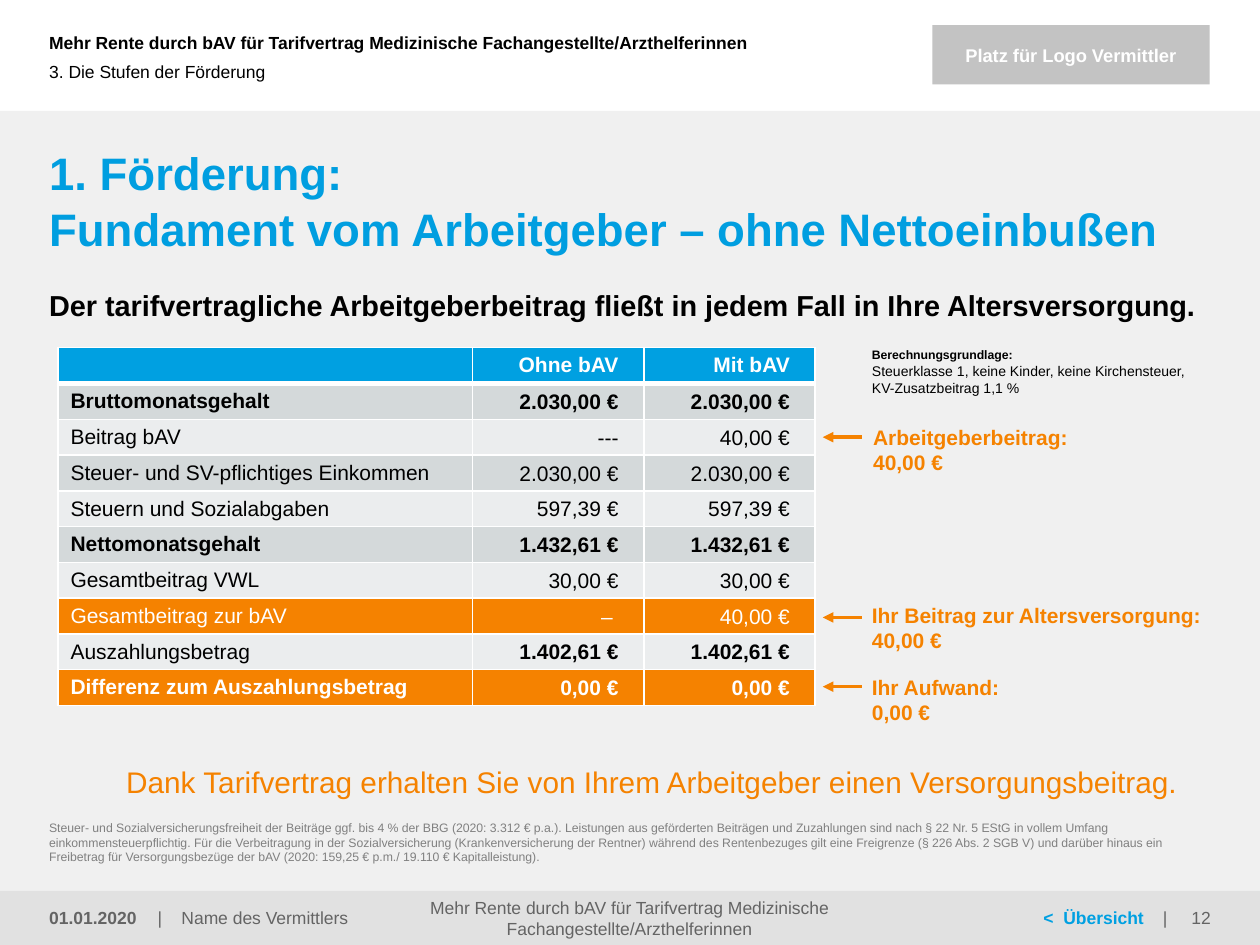
from lxml.etree import SubElement
from pptx import Presentation
from pptx.dml.color import RGBColor
from pptx.enum.shapes import MSO_CONNECTOR, MSO_SHAPE
from pptx.enum.text import MSO_ANCHOR as Anchor, MSO_AUTO_SIZE, PP_ALIGN as Align
from pptx.oxml.ns import qn
from pptx.util import Inches, Pt

BLUE = RGBColor(0x00, 0xA0, 0xE1)
TITLE_BLUE = RGBColor(0x00, 0x9E, 0xE0)
ORANGE = RGBColor(0xF5, 0x82, 0x00)
WHITE = RGBColor(0xFF, 0xFF, 0xFF)
BLACK = RGBColor(0x00, 0x00, 0x00)
PALE_GRAY = RGBColor(0xF0, 0xF0, 0xF0)
FOOTER_GRAY = RGBColor(0xE1, 0xE1, 0xE1)
LOGO_GRAY = RGBColor(0xC3, 0xC3, 0xC3)
TEXT_GRAY = RGBColor(0x64, 0x64, 0x64)
NOTE_GRAY = RGBColor(0x80, 0x80, 0x80)
ROW_DARK = RGBColor(0xD4, 0xD9, 0xDA)
ROW_LIGHT = RGBColor(0xEB, 0xED, 0xEE)


def write_paragraph(paragraph, text, size, color, bold=False, align=Align.LEFT):
    paragraph.text = text
    paragraph.alignment = align
    for run in paragraph.runs:
        run.font.name = "Arial"
        run.font.size = Pt(size)
        run.font.bold = bold
        run.font.color.rgb = color


def set_text(shape, place, text, size, color, bold=False, align=Align.LEFT,
             anchor=Anchor.TOP, insets=(0, 0, 0, 0)):
    """Place a text shape and fill its first paragraph; insets run left, top, right, bottom."""
    shape.left, shape.top, shape.width, shape.height = (Inches(value) for value in place)
    frame = shape.text_frame
    frame.word_wrap = True
    frame.auto_size = MSO_AUTO_SIZE.NONE
    frame.vertical_anchor = anchor
    (frame.margin_left, frame.margin_top,
     frame.margin_right, frame.margin_bottom) = (Inches(value) for value in insets)
    write_paragraph(frame.paragraphs[0], text, size, color, bold, align)
    return frame.paragraphs[0]


presentation = Presentation()
presentation.slide_width = Inches(10)
presentation.slide_height = Inches(7.5)
slide = presentation.slides.add_slide(presentation.slide_layouts[1])
shapes = slide.shapes

# Background bands lie behind the placeholders
for position, (top, height, color) in enumerate(
        [(0.88, 6.62, PALE_GRAY), (7.07, 0.43, FOOTER_GRAY)], start=2):
    band = shapes.add_shape(MSO_SHAPE.RECTANGLE, 0, Inches(top), Inches(10), Inches(height))
    band.shadow.inherit = False
    band.fill.solid()
    band.fill.fore_color.rgb = color
    band.line.fill.background()
    shapes._spTree.insert(position, band._element)

# Title and lead sentence
title = set_text(shapes.title, (0.39, 1.14, 9.22, 0.55),
                 "1. Förderung:\vFundament vom Arbeitgeber – ohne Nettoeinbußen",
                 26, TITLE_BLUE, True)
title.line_spacing = 1.03
lead = set_text(slide.placeholders[1], (0.39, 2.28, 9.22, 0.29),
                "Der tarifvertragliche Arbeitgeberbeitrag fließt in jedem Fall in Ihre Altersversorgung.",
                16.5, BLACK, True)
lead.space_before = Pt(0)
lead_properties = lead._p.get_or_add_pPr()
lead_properties.set("marL", "0")
lead_properties.set("indent", "0")
SubElement(lead_properties, qn("a:buNone"))

# Logo space
logo_space = shapes.add_shape(MSO_SHAPE.RECTANGLE, 0, 0, 0, 0)
logo_space.shadow.inherit = False
logo_space.fill.solid()
logo_space.fill.fore_color.rgb = LOGO_GRAY
logo_space.line.fill.background()
set_text(logo_space, (7.4, 0.2, 2.2, 0.47), "Platz für Logo Vermittler", 10.5, WHITE, True,
         Align.CENTER, Anchor.MIDDLE)

# Header, closing statement, footnote and footer
campaign = "Mehr Rente durch bAV für Tarifvertrag Medizinische Fachangestellte/Arzthelferinnen"
footnote = (
    "Steuer- und Sozialversicherungsfreiheit der Beiträge ggf. bis 4 % der BBG (2020: 3.312 € p.a.). "
    "Leistungen aus geförderten Beiträgen und Zuzahlungen sind nach § 22 Nr. 5 EStG in vollem Umfang "
    "einkommensteuerpflichtig. Für die Verbeitragung in der Sozialversicherung (Krankenversicherung "
    "der Rentner) während des Rentenbezuges gilt eine Freigrenze (§ 226 Abs. 2 SGB V) und darüber "
    "hinaus ein Freibetrag für Versorgungsbezüge der bAV (2020: 159,25 € p.m./ 19.110 € Kapitalleistung).")
text_boxes = [
    ((0, 0, 6.98, 0.67), campaign, 10, BLACK, True, Align.LEFT, Anchor.MIDDLE, (0.39, 0.05, 0.1, 0.05)),
    ((0, 0.25, 7.15, 0.63), "3. Die Stufen der Förderung", 10, BLACK, False, Align.LEFT,
     Anchor.MIDDLE, (0.39, 0, 0, 0)),
    ((1, 5.9, 8.61, 0.68),
     "Dank Tarifvertrag erhalten Sie von Ihrem Arbeitgeber einen Versorgungsbeitrag.",
     17, ORANGE, False, Align.LEFT, Anchor.MIDDLE, (0, 0, 0, 0.08)),
    ((0.39, 6.74, 9.21, 0.12), footnote, 7, NOTE_GRAY, False, Align.LEFT, Anchor.BOTTOM),
    ((0, 7.07, 1.22, 0.43), "01.01.2020", 10, TEXT_GRAY, True, Align.LEFT, Anchor.MIDDLE,
     (0.39, 0.05, 0.1, 0.05)),
    ((2.93, 7.07, 4.13, 0.43), campaign, 10, TEXT_GRAY, False, Align.CENTER, Anchor.MIDDLE),
    ((9.06, 7.07, 0.94, 0.43), "12", 10, TEXT_GRAY, False, Align.RIGHT, Anchor.MIDDLE,
     (0.1, 0.05, 0.39, 0.05)),
]
for settings in text_boxes:
    set_text(shapes.add_textbox(0, 0, 0, 0), *settings)

agent = set_text(shapes.add_textbox(0, 0, 0, 0), (1.25, 7.07, 1.68, 0.43),
                 "|\tName des Vermittlers", 10, TEXT_GRAY, anchor=Anchor.MIDDLE)
overview = set_text(shapes.add_textbox(0, 0, 0, 0), (8.28, 7.07, 1.02, 0.43),
                    "<\tÜbersicht", 10, BLUE, True, anchor=Anchor.MIDDLE)
separator = overview.add_run()
separator.text = "\t|"
separator.font.name = "Arial"
separator.font.size = Pt(10)
separator.font.color.rgb = TEXT_GRAY
for paragraph, stops in [(agent, [0.19]), (overview, [0.16, 0.95])]:
    tab_list = SubElement(paragraph._p.get_or_add_pPr(), qn("a:tabLst"))
    for stop in stops:
        SubElement(tab_list, qn("a:tab"), pos=str(Inches(stop)), algn="l")

# Salary table: label, two amounts, fill, text colour, bold label, bold amounts
rows = [
    ("", "Ohne bAV", "Mit bAV", BLUE, WHITE, True, True),
    ("Bruttomonatsgehalt", "2.030,00 €", "2.030,00 €", ROW_DARK, BLACK, True, True),
    ("Beitrag bAV", "---", "40,00 €", ROW_LIGHT, BLACK, False, False),
    ("Steuer- und SV-pflichtiges Einkommen", "2.030,00 €", "2.030,00 €", ROW_DARK, BLACK, False, False),
    ("Steuern und Sozialabgaben", "597,39 €", "597,39 €", ROW_LIGHT, BLACK, False, False),
    ("Nettomonatsgehalt", "1.432,61 €", "1.432,61 €", ROW_DARK, BLACK, True, True),
    ("Gesamtbeitrag VWL", "30,00 €", "30,00 €", ROW_LIGHT, BLACK, False, False),
    ("Gesamtbeitrag zur bAV", "– ", "40,00 €", ORANGE, WHITE, False, False),
    ("Auszahlungsbetrag", "1.402,61 €", "1.402,61 €", ROW_LIGHT, BLACK, False, True),
    ("Differenz zum Auszahlungsbetrag", "0,00 €", "0,00 €", ORANGE, WHITE, True, True),
]
table = shapes.add_table(len(rows), 3, Inches(0.46), Inches(2.76), Inches(6), Inches(2.84)).table
for column, width in zip(table.columns, (3.29, 1.36, 1.36)):
    column.width = Inches(width)
for row_index, (*texts, fill, color, bold_label, bold_amounts) in enumerate(rows):
    for column_index, text in enumerate(texts):
        cell = table.cell(row_index, column_index)
        is_amount = column_index > 0
        cell.vertical_anchor = Anchor.MIDDLE
        cell.margin_left = Inches(0.1)
        cell.margin_right = Inches(0.2 if is_amount else 0.1)
        cell.margin_top = Inches(0.07 if is_amount and row_index else 0.04)
        cell.margin_bottom = Inches(0.04)
        paragraph = cell.text_frame.paragraphs[0]
        write_paragraph(paragraph, text, 12, color, bold_amounts if is_amount else bold_label,
                        Align.RIGHT if is_amount else Align.LEFT)
        if is_amount and row_index:
            paragraph.line_spacing = 0.89
        if not text:
            SubElement(paragraph._p, qn("a:endParaRPr"), sz="1200")
        thick_side = {0: "lnB", 1: "lnT"}.get(row_index)
        for side in ("lnL", "lnR", "lnT", "lnB"):
            border = SubElement(cell._tc.get_or_add_tcPr(), qn(f"a:{side}"),
                                w=str(Pt(3 if side == thick_side else 1)))
            SubElement(SubElement(border, qn("a:solidFill")), qn("a:srgbClr"), val=str(WHITE))
        cell.fill.solid()
        cell.fill.fore_color.rgb = fill

# Basis of the calculation
basis_box = shapes.add_textbox(0, 0, 0, 0)
set_text(basis_box, (6.92, 2.76, 2.61, 0.38), "Berechnungsgrundlage:", 7, BLACK, True)
write_paragraph(basis_box.text_frame.add_paragraph(),
                "Steuerklasse 1, keine Kinder, keine Kirchensteuer, KV-Zusatzbeitrag 1,1 %", 8, BLACK)

# Callouts with arrows to their table rows
callouts = [
    (6.93, 3.37, 2.33, 3.47, "Arbeitgeberbeitrag:\v40,00 €"),
    (6.92, 4.78, 2.76, 4.9, "Ihr Beitrag zur Altersversorgung:\v40,00 €"),
    (6.92, 5.35, 2.33, 5.45, "Ihr Aufwand:\v0,00 €"),
]
for left, top, width, arrow_y, text in callouts:
    set_text(shapes.add_textbox(0, 0, 0, 0), (left, top, width, 0.4), text, 12, ORANGE, True)
    arrow = shapes.add_connector(MSO_CONNECTOR.STRAIGHT, Inches(6.84), Inches(arrow_y),
                                 Inches(6.53), Inches(arrow_y))
    arrow.line.color.rgb = ORANGE
    arrow.line.width = Pt(2)
    SubElement(arrow.line._get_or_add_ln(), qn("a:tailEnd"), type="triangle")
    SubElement(arrow._element.spPr, qn("a:effectLst"))

presentation.save("out.pptx")
